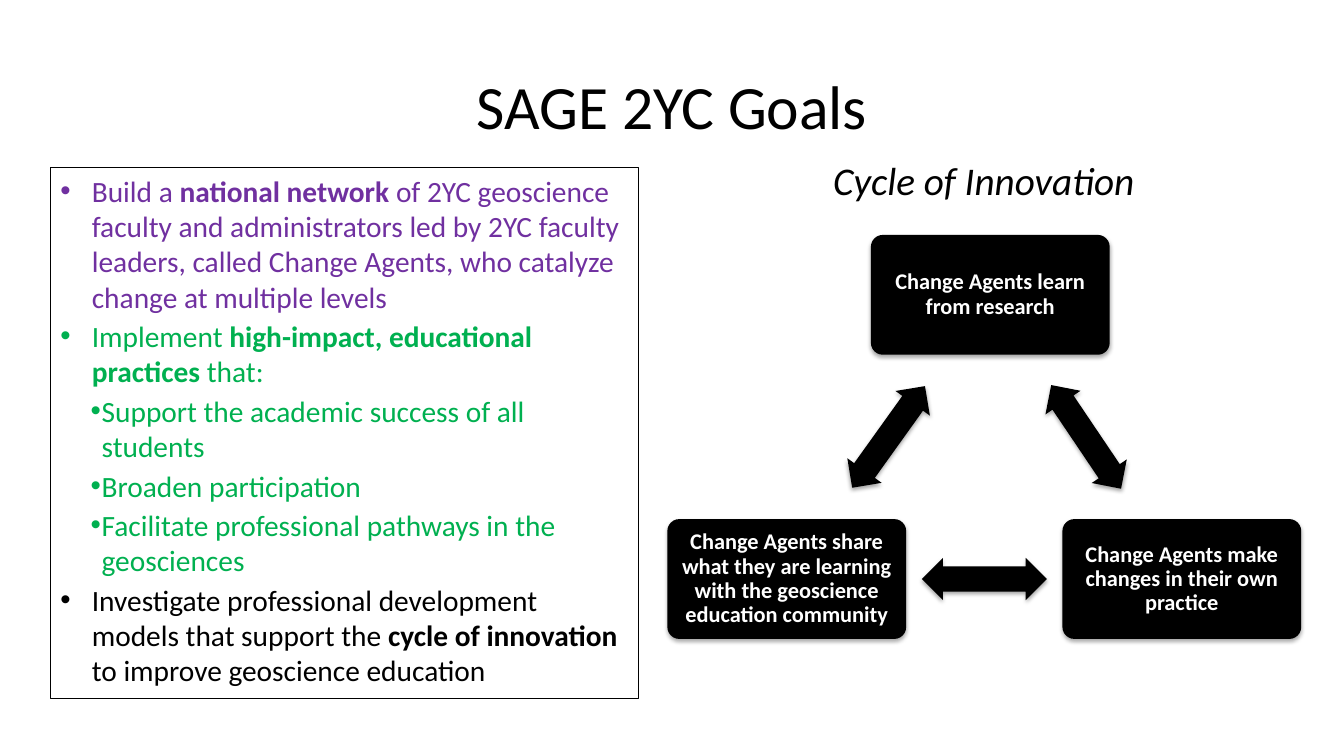
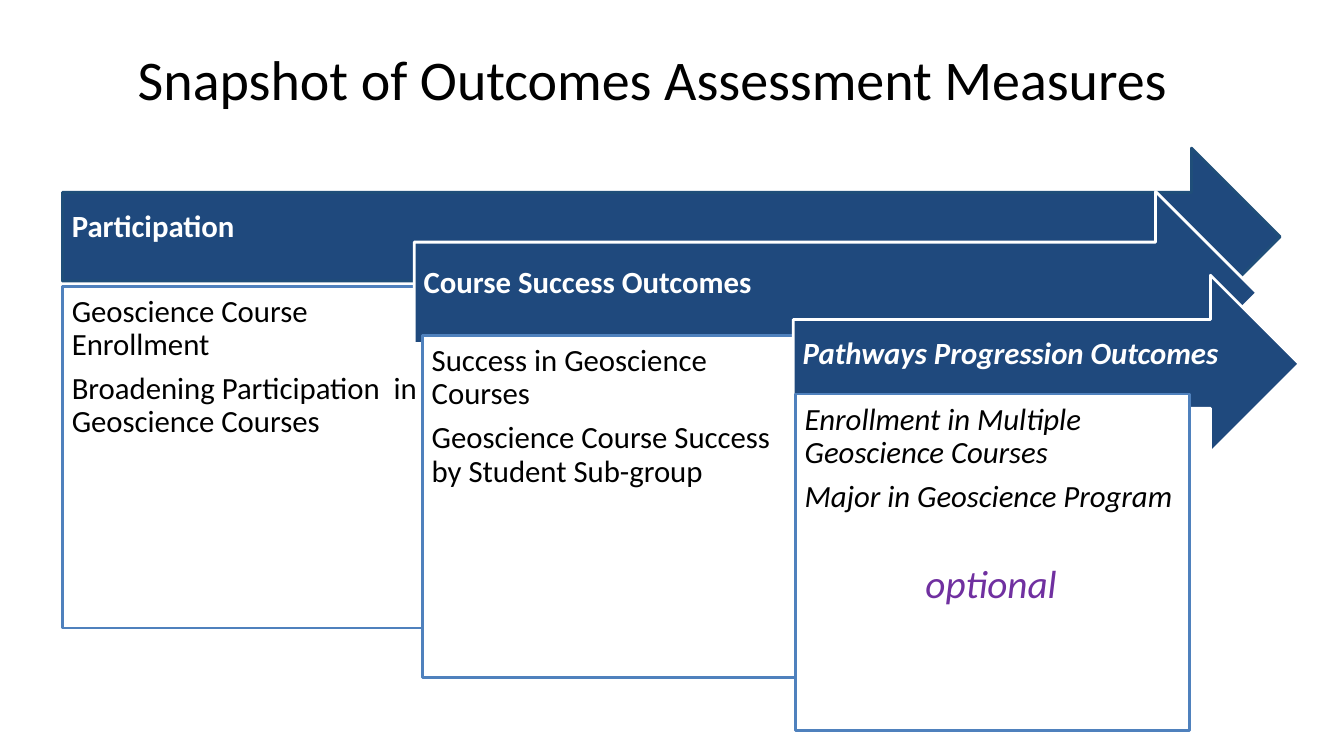
from dataclasses import dataclass
from itertools import combinations
from math import atan2, degrees

from lxml import etree
from pptx import Presentation
from pptx.dml.color import RGBColor
from pptx.enum.shapes import MSO_SHAPE
from pptx.enum.text import MSO_ANCHOR, PP_ALIGN
from pptx.oxml.ns import qn
from pptx.util import Pt

ROUNDED = MSO_SHAPE.ROUNDED_RECTANGLE
RECTANGLE = MSO_SHAPE.RECTANGLE
DOUBLE_ARROW = MSO_SHAPE.LEFT_RIGHT_ARROW
RIGHT_ARROW = MSO_SHAPE.RIGHT_ARROW
TOP, MIDDLE = MSO_ANCHOR.TOP, MSO_ANCHOR.MIDDLE
LEFT, CENTER = PP_ALIGN.LEFT, PP_ALIGN.CENTER
TITLE_ONLY = 5


@dataclass(frozen=True)
class Theme:
    font: str = "Calibri"
    black: str = "000000"
    white: str = "FFFFFF"
    purple: str = "7030A0"
    green: str = "00B050"
    navy: str = "1F497D"
    navy_edge: str = "1F4E79"
    blue: str = "4F81BD"
    title: int = 44
    long_title: int = 40
    caption: int = 28
    stage: int = 22
    bullet: int = 21
    cycle: int = 16


THEME = Theme()
DEFAULT_INSETS = (7.2, 3.6, 7.2, 3.6)

GOALS = [
    (0, THEME.purple, [
        ("Build a ", False),
        ("national network ", True),
        ("of 2YC geoscience faculty and administrators led by 2YC faculty leaders, "
         "called Change Agents, who catalyze change at multiple levels", False)]),
    (0, THEME.green, [
        ("Implement ", False),
        ("high-impact, educational practices ", True),
        ("that:", False)]),
    (1, THEME.green, [("Support the academic success of all students", False)]),
    (1, THEME.green, [("Broaden participation", False)]),
    (1, THEME.green, [("Facilitate professional pathways in the geosciences", False)]),
    (0, THEME.black, [
        ("Investigate professional development models that support the ", False),
        ("cycle of innovation ", True),
        ("to improve geoscience education", False)]),
]
BULLET_INDENTS = [(22.5, 22.5), (29.5, 7.9)]

CYCLE_STEPS = [
    ("Change Agents learn from research", (707.4, 210.6)),
    ("Change Agents make changes in their own practice", (844.2, 413.6)),
    ("Change Agents share what they are learning with the geoscience "
     "education community", (562, 413.6)),
]
CYCLE_BOX = (170.6, 85.6)
CYCLE_ARROW = (89.3, 30.2)

STAGES = [
    ("Participation", (44.6, 105.8, 869.8, 126.7), (44.6, 204.5, 267.8, 244.1),
     THEME.navy_edge, False,
     ["Geoscience Course Enrollment",
      "Broadening Participation  in Geoscience Courses"]),
    ("Course Success Outcomes", (295.9, 136.8, 601.9, 144.7),
     (301.7, 239.8, 267.8, 244.1), THEME.white, False,
     ["Success in Geoscience Courses",
      "Geoscience Course Success by Student Sub-group"]),
    ("Pathways Progression Outcomes", (566.6, 196.6, 361.4, 126.7),
     (568.1, 281.5, 281.5, 240.5), THEME.white, True,
     ["Enrollment in Multiple Geoscience Courses",
      "Major in Geoscience Program"]),
]


def points(values):
    return [Pt(value) for value in values]


def centered(center, size):
    return (center[0] - size[0] / 2, center[1] - size[1] / 2, *size)


def add_run(paragraph, text, size, color, bold=False, italic=False):
    run = paragraph.add_run()
    run.text = text
    font = run.font
    font.name, font.size = THEME.font, Pt(size)
    font.bold, font.italic = bold, italic
    font.color.rgb = RGBColor.from_string(color)


def set_frame(shape, anchor, insets=DEFAULT_INSETS):
    frame = shape.text_frame
    frame.word_wrap = True
    frame.vertical_anchor = anchor
    (frame.margin_left, frame.margin_top,
     frame.margin_right, frame.margin_bottom) = points(insets)
    return frame


def next_paragraph(frame, index):
    return frame.add_paragraph() if index else frame.paragraphs[0]


def write_lines(shape, lines, size, color, anchor, insets, align=LEFT,
                bold=False, italic=False):
    frame = set_frame(shape, anchor, insets)
    for index, text in enumerate(lines):
        paragraph = next_paragraph(frame, index)
        paragraph.alignment = align
        paragraph.line_spacing = 0.9
        paragraph.space_after = Pt(size * 0.35)
        add_run(paragraph, text, size, color, bold, italic)


def add_title_slide(presentation, text, bounds, size):
    slide = presentation.slides.add_slide(presentation.slide_layouts[TITLE_ONLY])
    title = slide.shapes.title
    title.left, title.top, title.width, title.height = points(bounds)
    paragraph = set_frame(title, MIDDLE).paragraphs[0]
    paragraph.alignment = CENTER
    add_run(paragraph, text, size, THEME.black)
    return slide


def add_filled_shape(slide, kind, bounds, fill, line=None, adjustments=()):
    shape = slide.shapes.add_shape(kind, *points(bounds))
    shape.shadow.inherit = False
    for index, value in enumerate(adjustments):
        shape.adjustments[index] = value
    shape.fill.solid()
    shape.fill.fore_color.rgb = RGBColor.from_string(fill)
    if line:
        shape.line.color.rgb = RGBColor.from_string(line)
        shape.line.width = Pt(2)
    else:
        shape.line.fill.background()
    return shape


def add_soft_shadow(shape):
    effects = shape.element.spPr.find(qn("a:effectLst"))
    shadow = etree.SubElement(effects, qn("a:outerShdw"), blurRad=str(Pt(3.1)),
                              dist=str(Pt(1.8)), dir="5400000", rotWithShape="0")
    color = etree.SubElement(shadow, qn("a:srgbClr"), val=THEME.black)
    etree.SubElement(color, qn("a:alpha"), val="35000")


def add_caption(slide, text, bounds, color):
    box = slide.shapes.add_textbox(*points(bounds))
    paragraph = set_frame(box, TOP).paragraphs[0]
    add_run(paragraph, text, THEME.caption, color, italic=True)


def set_bullet(paragraph, level):
    margin, hanging = BULLET_INDENTS[level]
    paragraph.level = level
    properties = paragraph._p.get_or_add_pPr()
    properties.set("marL", str(Pt(margin)))
    properties.set("indent", str(-Pt(hanging)))
    etree.SubElement(properties, qn("a:buFont"), typeface="Arial")
    etree.SubElement(properties, qn("a:buChar"), char="•")


def add_goal_list(slide, bounds):
    box = slide.shapes.add_textbox(*points(bounds))
    box.line.color.rgb = RGBColor.from_string(THEME.black)
    box.line.width = Pt(0.75)
    frame = set_frame(box, TOP)
    for index, (level, color, runs) in enumerate(GOALS):
        paragraph = next_paragraph(frame, index)
        paragraph.space_before = Pt(3)
        set_bullet(paragraph, level)
        for text, bold in runs:
            add_run(paragraph, text, THEME.bullet, color, bold)


def add_cycle_step(slide, text, center):
    box = add_filled_shape(slide, ROUNDED, centered(center, CYCLE_BOX),
                           THEME.black, adjustments=[0.1])
    add_soft_shadow(box)
    write_lines(box, [text], THEME.cycle, THEME.white, MIDDLE, (4.8,) * 4,
                CENTER, bold=True)


def add_cycle_arrow(slide, start, end):
    middle = ((start[0] + end[0]) / 2, (start[1] + end[1]) / 2)
    arrow = add_filled_shape(slide, DOUBLE_ARROW, centered(middle, CYCLE_ARROW),
                             THEME.black, adjustments=[0.6, 0.5])
    arrow.rotation = degrees(atan2(end[1] - start[1], end[0] - start[0])) % 180
    add_soft_shadow(arrow)


def add_stage(slide, heading, arrow_bounds, box_bounds, edge, italic, measures):
    arrow = add_filled_shape(slide, RIGHT_ARROW, arrow_bounds, THEME.navy, edge)
    write_lines(arrow, [heading], THEME.stage, THEME.white, MIDDLE,
                (6.7, 6.7, 20, 20), bold=True, italic=italic)
    box = add_filled_shape(slide, RECTANGLE, box_bounds, THEME.white, THEME.blue)
    write_lines(box, measures, THEME.stage, THEME.black, TOP, (6.7,) * 4,
                italic=italic)


def build_goals(presentation):
    slide = add_title_slide(presentation, "SAGE 2YC Goals",
                            (48, 30, 864, 90), THEME.title)
    for text, center in CYCLE_STEPS:
        add_cycle_step(slide, text, center)
    centers = [center for _, center in CYCLE_STEPS]
    for start, end in combinations(centers, 2):
        add_cycle_arrow(slide, start, end)
    add_goal_list(slide, (36, 120, 420, 379))
    add_caption(slide, "Cycle of Innovation", (588, 108, 239, 41), THEME.black)


def build_outcomes(presentation):
    slide = add_title_slide(presentation, "Snapshot of Outcomes Assessment Measures",
                            (10, 14.5, 912, 83), THEME.long_title)
    for stage in STAGES:
        add_stage(slide, *stage)
    add_caption(slide, "optional", (654, 396, 114, 41), THEME.purple)


def main():
    presentation = Presentation()
    presentation.slide_width, presentation.slide_height = Pt(960), Pt(540)
    build_goals(presentation)
    build_outcomes(presentation)
    presentation.save("out.pptx")


if __name__ == "__main__":
    main()
